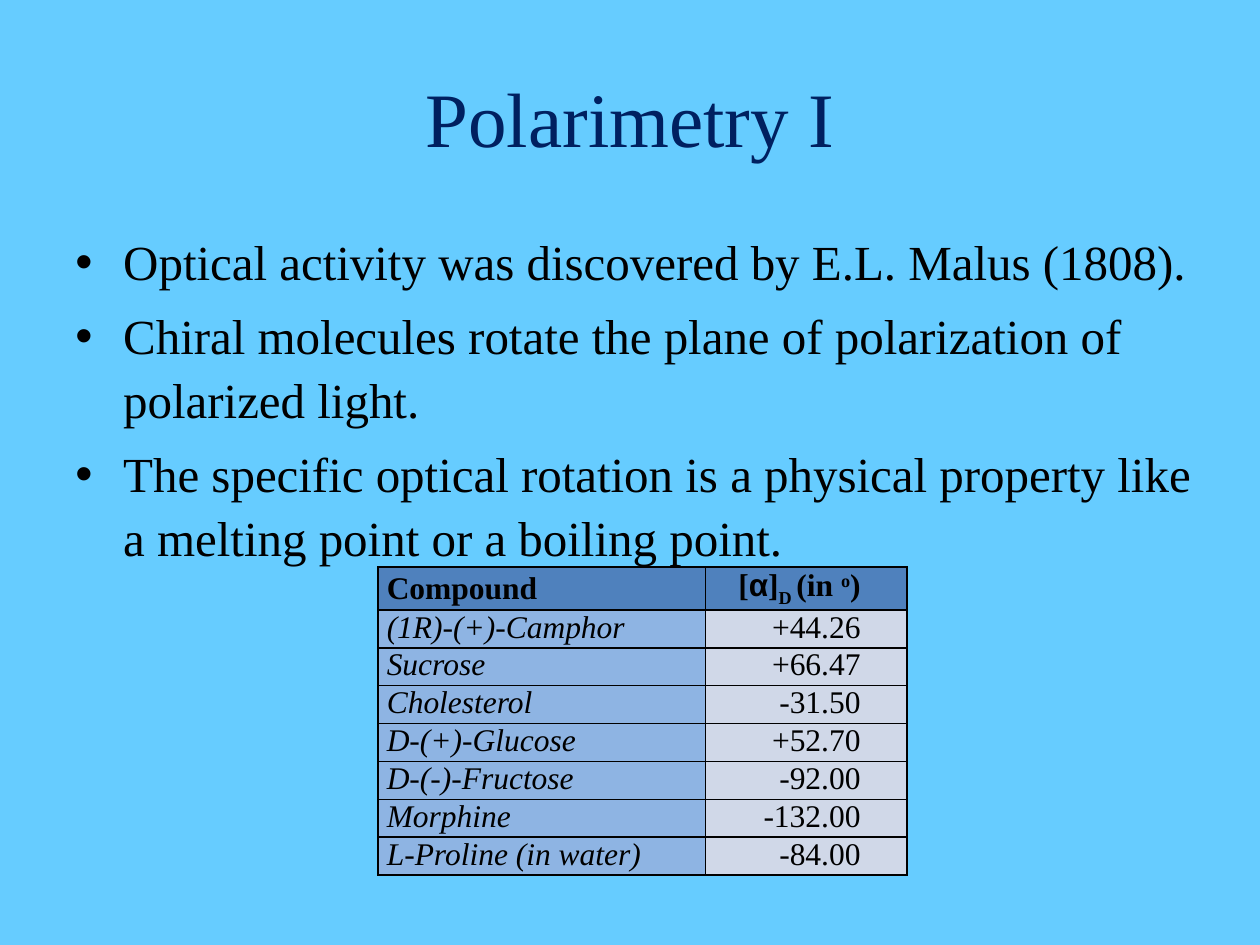
import dataclasses

import pptx
import pptx.dml.color
import pptx.enum.text
import pptx.oxml.ns
import pptx.util
from lxml import etree
from pptx.util import Inches

ALIGN = pptx.enum.text.PP_ALIGN
ANCHOR = pptx.enum.text.MSO_ANCHOR


@dataclasses.dataclass(frozen=True)
class Theme:
    """Colours, fonts and type sizes of the slide."""
    background: str = "66CCFF"
    title: str = "002060"
    ink: str = "000000"
    header: str = "4F81BD"
    compound: str = "8EB4E3"
    rotation: str = "D0D8E8"
    font: str = "Times New Roman"
    symbol_font: str = "Arial"
    title_size: int = 44
    body_size: int = 28
    table_size: int = 18


THEME = Theme()
POINTS = [
    "Optical activity was discovered by E.L. Malus (1808).",
    "Chiral molecules rotate the plane of polarization of polarized light.",
    "The specific optical rotation is a physical property like a melting point or a boiling point.",
]
ROTATIONS = [
    ("(1R)-(+)-Camphor", "+44.26"),
    ("Sucrose", "+66.47"),
    ("Cholesterol", "-31.50"),
    ("D-(+)-Glucose", "+52.70"),
    ("D-(-)-Fructose", "-92.00"),
    ("Morphine", "-132.00"),
    ("L-Proline (in water)", "-84.00"),
]


def rgb(colour):
    """Turn a hex string into a colour."""
    return pptx.dml.color.RGBColor.from_string(colour)


def add_child(parent, tag, **attributes):
    """Append a drawing element with the given attributes."""
    child = etree.SubElement(parent, pptx.oxml.ns.qn(tag))
    for key, value in attributes.items():
        child.set(key, str(value))
    return child


def write(paragraph, text, size=THEME.table_size, colour=THEME.ink, font=THEME.font,
          bold=False, italic=False, baseline=0, align=ALIGN.LEFT):
    """Add a formatted run to a paragraph."""
    paragraph.alignment = align
    run = paragraph.add_run()
    run.text = text
    run.font.size = pptx.util.Pt(size)
    run.font.name = font
    run.font.color.rgb = rgb(colour)
    run.font.bold = bold
    run.font.italic = italic
    if baseline:
        run.font._element.set("baseline", str(baseline * 1000))


def add_text_frame(slide, left, top, width, height, anchor=ANCHOR.TOP):
    """Add a wrapping text box and return its frame."""
    frame = slide.shapes.add_textbox(
        Inches(left), Inches(top), Inches(width), Inches(height)).text_frame
    frame.word_wrap = True
    frame.vertical_anchor = anchor
    return frame


def add_points(slide):
    """Add the bulleted statements."""
    frame = add_text_frame(slide, 0.5, 1.75, 9.17, 4.95)
    for index, point in enumerate(POINTS):
        paragraph = frame.add_paragraph() if index else frame.paragraphs[0]
        write(paragraph, point, size=THEME.body_size)
        paragraph.line_spacing = 1.09
        paragraph.space_before = pptx.util.Pt(0.2 * THEME.body_size)
        properties = paragraph._p.get_or_add_pPr()
        properties.set("marL", str(Inches(0.38)))
        properties.set("indent", str(-Inches(0.38)))
        add_child(properties, "a:buFont", typeface=THEME.symbol_font)
        add_child(properties, "a:buChar", char="•")


def style_cell(cell, fill, left=0.07, right=0.07, anchor=ANCHOR.TOP):
    """Set a cell's borders, fill and margins and return its paragraph."""
    properties = cell._tc.get_or_add_tcPr()
    for side in ("a:lnL", "a:lnR", "a:lnT", "a:lnB"):
        line = add_child(properties, side, w=pptx.util.Pt(1))
        add_child(add_child(line, "a:solidFill"), "a:srgbClr", val=THEME.ink)
    cell.fill.solid()
    cell.fill.fore_color.rgb = rgb(fill)
    cell.margin_left, cell.margin_right = Inches(left), Inches(right)
    cell.margin_top = cell.margin_bottom = 0
    cell.vertical_anchor = anchor
    return cell.text_frame.paragraphs[0]


def add_rotation_table(slide):
    """Add the table of specific rotations."""
    header_height, row_height = 0.32, 0.27
    table = slide.shapes.add_table(
        len(ROTATIONS) + 1, 2, Inches(3), Inches(4.5), Inches(4.2),
        Inches(header_height + row_height * len(ROTATIONS))).table
    for column, width in zip(table.columns, (2.6, 1.6)):
        column.width = Inches(width)
    for index, row in enumerate(table.rows):
        row.height = Inches(row_height if index else header_height)

    heading = style_cell(table.cell(0, 0), THEME.header, anchor=ANCHOR.MIDDLE)
    write(heading, "Compound", bold=True)
    heading = style_cell(table.cell(0, 1), THEME.header, left=0.26, anchor=ANCHOR.MIDDLE)
    for text, font, baseline in (
            ("[", THEME.font, 0), ("α", THEME.symbol_font, 0), ("]", THEME.font, 0),
            ("D ", THEME.font, -25), ("(in ", THEME.font, 0),
            ("o", THEME.font, 30), (")", THEME.font, 0)):
        write(heading, text, font=font, baseline=baseline, bold=True)

    for index, (compound, rotation) in enumerate(ROTATIONS, start=1):
        write(style_cell(table.cell(index, 0), THEME.compound), compound, italic=True)
        write(style_cell(table.cell(index, 1), THEME.rotation, right=0.37),
              rotation, align=ALIGN.RIGHT)


def main():
    """Build and save the slide."""
    deck = pptx.Presentation()
    deck.slide_width, deck.slide_height = Inches(10), Inches(7.5)
    slide = deck.slides.add_slide(deck.slide_layouts[6])
    slide.background.fill.solid()
    slide.background.fill.fore_color.rgb = rgb(THEME.background)
    title = add_text_frame(slide, 0.5, 0.3, 9, 1.25, anchor=ANCHOR.MIDDLE)
    write(title.paragraphs[0], "Polarimetry I", size=THEME.title_size,
          colour=THEME.title, align=ALIGN.CENTER)
    add_points(slide)
    add_rotation_table(slide)
    deck.save("out.pptx")


if __name__ == "__main__":
    main()
